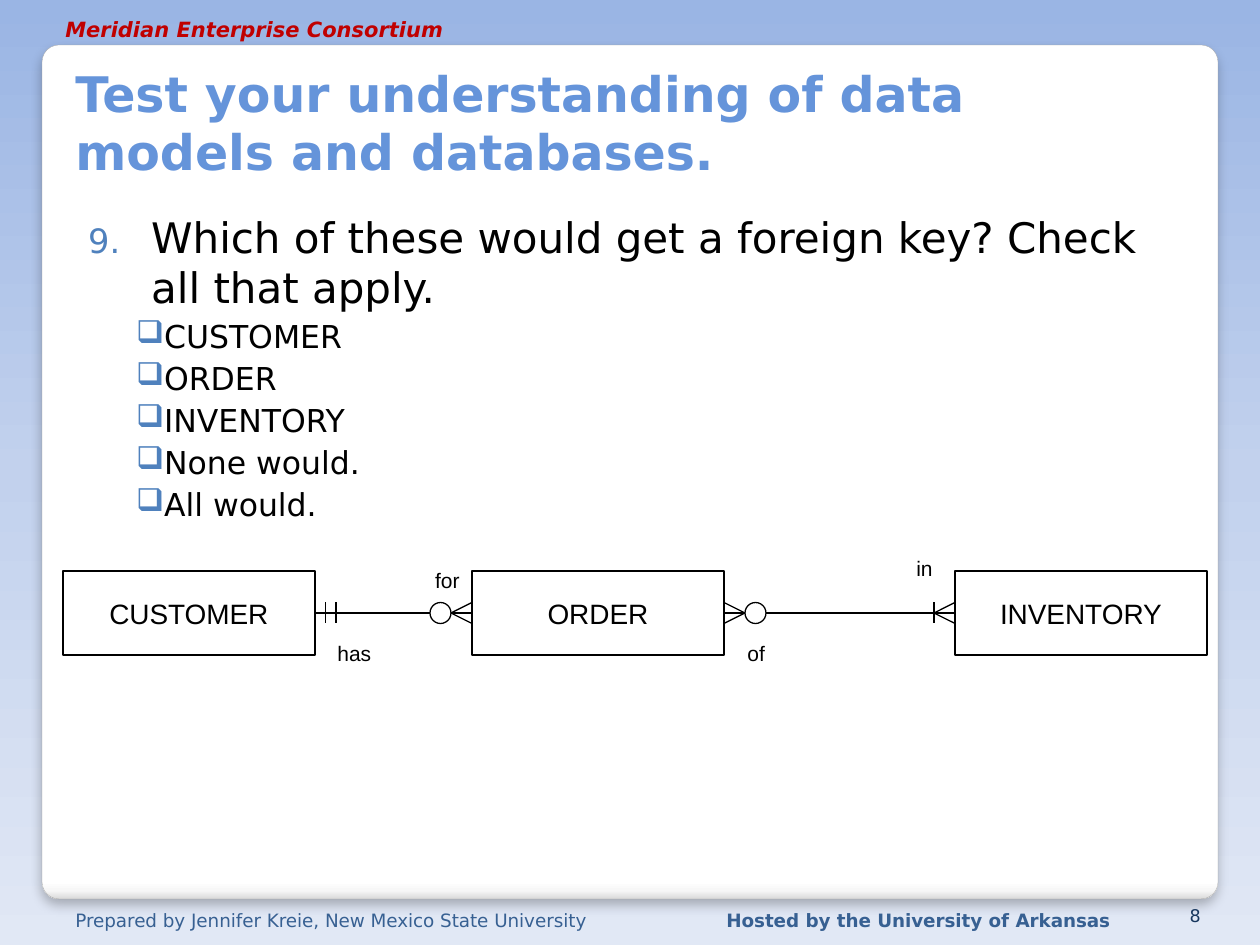
from dataclasses import dataclass

from lxml import etree
from pptx import Presentation
from pptx import util as u
from pptx.dml.color import RGBColor
from pptx.enum import shapes, text
from pptx.oxml.ns import qn

LEFT, CENTER, RIGHT = text.PP_ALIGN.LEFT, text.PP_ALIGN.CENTER, text.PP_ALIGN.RIGHT
TOP, MIDDLE, BOTTOM = (text.MSO_ANCHOR.TOP, text.MSO_ANCHOR.MIDDLE,
                       text.MSO_ANCHOR.BOTTOM)


@dataclass(frozen=True)
class Theme:
    sans: str = "DejaVu Sans"
    diagram: str = "Arial"
    ink: str = "000000"
    title: str = "6594DA"
    bullet: str = "4F81BD"
    footer: str = "376092"
    number: str = "17375E"
    header: str = "C00000"
    panel_edge: str = "A4A4A4"
    backdrop: tuple = ((0, "9AB5E4"), (50, "C2D1ED"), (100, "E1E8F5"))
    panel: tuple = ((0, "FFFFFF"), (98, "FFFFFF"), (99, "F7F7F7"), (100, "DADADA"))
    title_size: float = 28
    question_size: float = 24
    option_size: float = 18
    entity_size: float = 16
    small_size: float = 12
    footer_size: float = 10.5
    number_size: float = 10
    stroke: float = 0.75


THEME = Theme()

# Text, box in px, then size, colour and further style
FRAME_TEXTS = [
    ("Prepared by Jennifer Kreie, New Mexico State University", (63, 903, 562, 29),
     THEME.footer_size, THEME.footer, {}),
    ("Hosted by the University of Arkansas", (714, 903, 420, 29),
     THEME.footer_size, THEME.footer, {"bold": True}),
    ("Meridian Enterprise Consortium", (53, 10, 420, 29),
     THEME.small_size, THEME.header, {"bold": True, "italic": True}),
    ("Test your understanding of data models and databases.", (63, 42, 1128, 145),
     THEME.title_size, THEME.title, {"bold": True, "anchor": BOTTOM}),
    ("8", (1150, 903, 63, 29),
     THEME.number_size, THEME.number, {"align": RIGHT, "anchor": BOTTOM}),
]
QUESTION_NUMBER = 9
QUESTION = "Which of these would get a foreign key? Check all that apply."
OPTIONS = ["CUSTOMER", "ORDER", "INVENTORY", "None would.", "All would."]

ENTITY_LEFT = {"CUSTOMER": 63, "ORDER": 472, "INVENTORY": 955}
# Left entity and its symbols, right entity and its symbols (outward from the entity)
RELATIONS = [
    ("CUSTOMER", ("one", "only"), "ORDER", ("many", "zero")),
    ("ORDER", ("many", "zero"), "INVENTORY", ("many", "one")),
]
ROLES = [("has", 325, 634, LEFT), ("for", 388, 561, RIGHT),
         ("of", 735, 634, LEFT), ("in", 861, 549, RIGHT)]

ENTITY_TOP, ENTITY_W, ENTITY_H = 571, 252, 84
AXIS = ENTITY_TOP + ENTITY_H // 2
MARK = 21
ROLE_W, ROLE_H = 84, 38
SIDE_LEFT, SIDE_RIGHT = 1, 3


def px(*lengths):
    return [u.Emu(round(n * 914400 / 126)) for n in lengths]


def rgb(colour):
    return RGBColor.from_string(colour)


def sub(parent, tag, **attributes):
    child = etree.SubElement(parent, qn(tag))
    for key, value in attributes.items():
        child.set(key, str(value))
    return child


def fill_downward(fill, owner, stops):
    """Give the fill a top-to-bottom gradient; owner is its XML element."""
    fill.gradient()
    fill.gradient_angle = 270
    stop_list = owner.find(".//" + qn("a:gsLst"))
    for default in list(stop_list):
        stop_list.remove(default)
    for percent, colour in stops:
        stop = sub(stop_list, "a:gs", pos=percent * 1000)
        sub(stop, "a:srgbClr", val=colour)


def add_run(paragraph, words, size, colour=THEME.ink, face=THEME.sans,
            bold=False, italic=False):
    run = paragraph.add_run()
    run.text = words
    font = run.font
    font.name, font.size, font.bold, font.italic = face, u.Pt(size), bold, italic
    font.color.rgb = rgb(colour)


def add_text(slide, words, box, size, colour, align=LEFT, anchor=TOP, **style):
    area = slide.shapes.add_textbox(*px(*box)).text_frame
    area.word_wrap = True
    area.vertical_anchor = anchor
    area.paragraphs[0].alignment = align
    add_run(area.paragraphs[0], words, size, colour, **style)
    return area


def add_outline(slide, preset, box):
    outline = slide.shapes.add_shape(preset, *px(*box))
    outline.shadow.inherit = False
    outline.fill.background()
    outline.line.color.rgb = rgb(THEME.ink)
    outline.line.width = u.Pt(THEME.stroke)
    return outline


def add_line(slide, x1, y1, x2, y2):
    line = slide.shapes.add_connector(shapes.MSO_CONNECTOR.STRAIGHT,
                                      *px(x1, y1, x2, y2))
    line.line.color.rgb = rgb(THEME.ink)
    line.line.width = u.Pt(THEME.stroke)
    sub(line._element.spPr, "a:effectLst")
    return line


def add_panel(slide):
    panel = slide.shapes.add_shape(shapes.MSO_SHAPE.ROUNDED_RECTANGLE,
                                   *px(42, 45, 1176, 854))
    panel.adjustments[0] = 0.02
    fill_downward(panel.fill, panel._element, THEME.panel)
    panel.line.color.rgb = rgb(THEME.panel_edge)
    panel.line.width = u.Pt(0.16)
    panel.shadow.inherit = False
    shadow = sub(panel._element.spPr.find(qn("a:effectLst")), "a:outerShdw",
                 blurRad=u.Pt(6), dist=u.Pt(4), dir=5400000, rotWithShape=0)
    sub(sub(shadow, "a:srgbClr", val=THEME.ink), "a:alpha", val=25000)


def add_bullet(paragraph, margin, hang, scale, tag, **kind):
    paragraph.space_before = u.Pt(2.5)
    properties = paragraph._p.get_or_add_pPr()
    properties.set("marL", str(u.Inches(margin)))
    properties.set("indent", str(-u.Inches(hang)))
    sub(sub(properties, "a:buClr"), "a:srgbClr", val=THEME.bullet)
    sub(properties, "a:buSzPct", val=scale * 1000)
    sub(properties, tag, **kind)


def add_question(slide):
    area = slide.shapes.add_textbox(*px(63, 199, 1124, 451)).text_frame
    area.word_wrap = True
    area.margin_left, area.margin_top = u.Inches(0.2), u.Inches(0.1)
    question = area.paragraphs[0]
    add_bullet(question, 0.5, 0.5, 80, "a:buAutoNum",
               type="arabicPeriod", startAt=QUESTION_NUMBER)
    add_run(question, QUESTION, THEME.question_size)
    for words in OPTIONS:
        option = area.add_paragraph()
        option.level = 1
        add_bullet(option, 0.6, 0.22, 100, "a:buChar", char="❑")
        add_run(option, words, THEME.option_size)


def add_entity(slide, name, left):
    entity = add_outline(slide, shapes.MSO_SHAPE.RECTANGLE,
                         (left, ENTITY_TOP, ENTITY_W, ENTITY_H))
    area = entity.text_frame
    area.word_wrap = False
    area.vertical_anchor = MIDDLE
    area.paragraphs[0].alignment = CENTER
    add_run(area.paragraphs[0], name, THEME.entity_size, face=THEME.diagram)
    return entity


def add_cardinality(slide, entity, edge, side, symbols):
    """Draw the symbols at one entity side and return where the relation line starts."""
    outward = 1 if side == SIDE_RIGHT else -1
    inner = edge + outward * MARK
    high, low = AXIS - MARK / 2, AXIS + MARK / 2
    add_line(slide, edge, AXIS, inner, AXIS).begin_connect(entity, side)
    if "many" in symbols:
        for toe in (high, low):
            add_line(slide, inner, AXIS, edge, toe)
    if "one" in symbols:
        add_line(slide, inner, high, inner, low)
    if "only" in symbols:
        middle = (edge + inner) / 2
        add_line(slide, middle, high, middle, low)
    if "zero" in symbols:
        outer = inner + outward * MARK
        add_outline(slide, shapes.MSO_SHAPE.OVAL,
                    (min(inner, outer), high, MARK, MARK))
        return outer
    return inner


def add_diagram(slide):
    entities = {name: add_entity(slide, name, left)
                for name, left in ENTITY_LEFT.items()}
    for source, source_marks, target, target_marks in RELATIONS:
        start = add_cardinality(slide, entities[source], ENTITY_LEFT[source] + ENTITY_W,
                                SIDE_RIGHT, source_marks)
        end = add_cardinality(slide, entities[target], ENTITY_LEFT[target],
                              SIDE_LEFT, target_marks)
        add_line(slide, start, AXIS, end, AXIS)
    for role, left, top, align in ROLES:
        area = add_text(slide, role, (left, top, ROLE_W, ROLE_H), THEME.small_size,
                        THEME.ink, align, face=THEME.diagram)
        area.auto_size = text.MSO_AUTO_SIZE.SHAPE_TO_FIT_TEXT


def main():
    deck = Presentation()
    deck.slide_width, deck.slide_height = px(1260, 945)
    slide = deck.slides.add_slide(deck.slide_layouts[6])
    fill_downward(slide.background.fill, slide.element, THEME.backdrop)
    add_panel(slide)
    for words, box, size, colour, style in FRAME_TEXTS:
        add_text(slide, words, box, size, colour, **style)
    add_question(slide)
    add_diagram(slide)
    deck.save("out.pptx")


if __name__ == "__main__":
    main()
